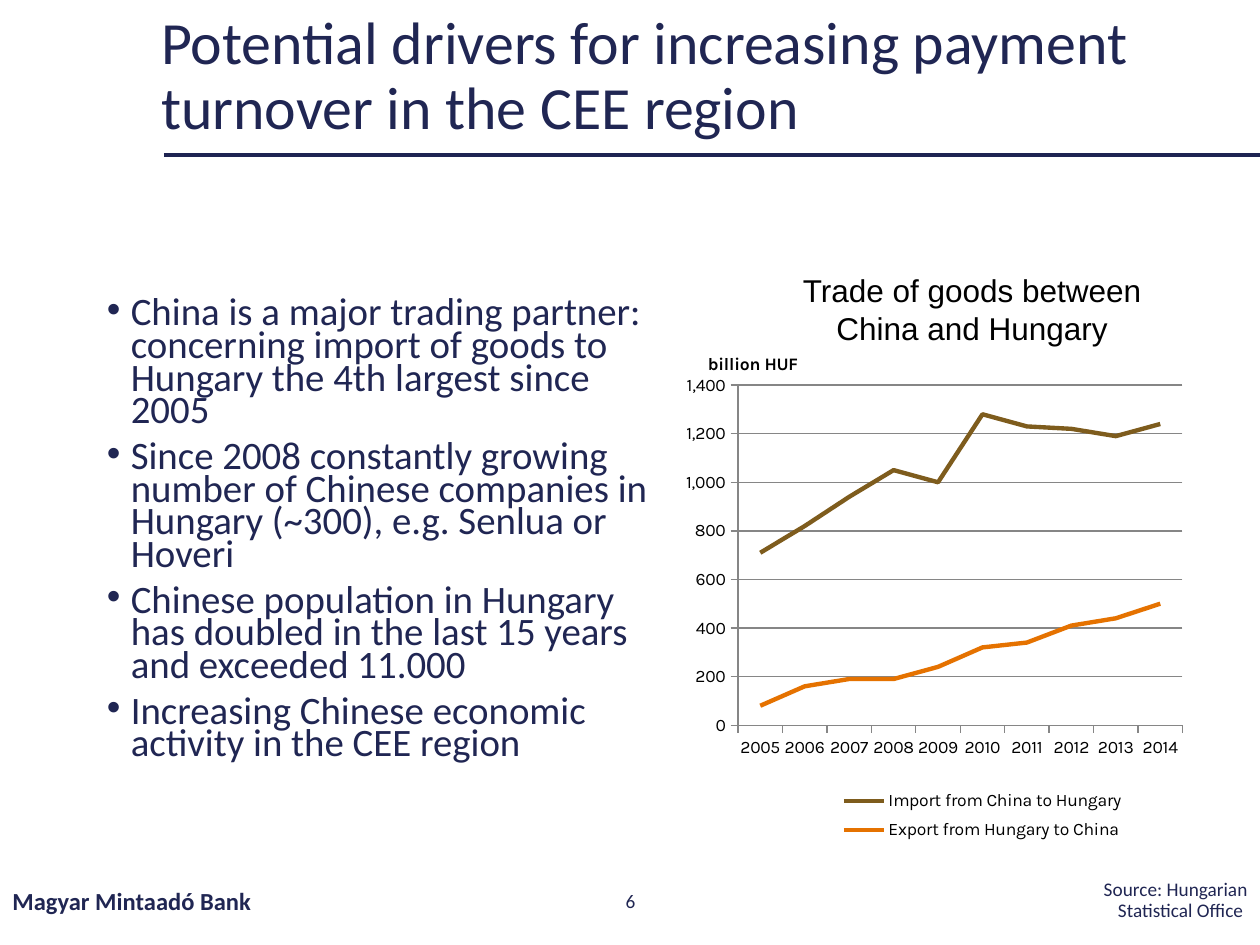
from lxml import etree
from pptx import Presentation
from pptx.chart.data import CategoryChartData
from pptx.dml.color import RGBColor
from pptx.enum.chart import XL_CHART_TYPE as ChartType
from pptx.enum.chart import XL_LEGEND_POSITION as LegendPosition
from pptx.enum.chart import XL_TICK_MARK as TickMark
from pptx.enum.shapes import MSO_CONNECTOR as Connector
from pptx.enum.text import MSO_ANCHOR as Anchor
from pptx.enum.text import PP_ALIGN as Align
from pptx.oxml import parse_xml
from pptx.oxml.ns import nsdecls, qn
from pptx.util import Inches, Pt

NAVY = RGBColor(0x20, 0x26, 0x53)
RULE_NAVY = RGBColor(0x1E, 0x24, 0x52)
BLACK = RGBColor(0, 0, 0)
GRAY = RGBColor(0x86, 0x86, 0x86)
BROWN = RGBColor(0x7E, 0x5C, 0x1D)
ORANGE = RGBColor(0xE5, 0x72, 0x00)


def format_font(font, color, **values):
    for name, value in values.items():
        setattr(font, name, value)
    font.color.rgb = color


def place_chart_part(part, index, target="", **fractions):
    """Give a chart part a manual layout, as fractions of the chart, at a child index."""
    for old in part.findall(qn("c:layout")):
        part.remove(old)
    modes = "".join(f'<c:{side}Mode val="edge"/>' for side in "xy")
    sizes = "".join(f'<c:{key} val="{value}"/>' for key, value in fractions.items())
    part.insert(index, parse_xml(
        f'<c:layout {nsdecls("c")}><c:manualLayout>{target}{modes}{sizes}'
        "</c:manualLayout></c:layout>"))


deck = Presentation()
deck.slide_width, deck.slide_height = Inches(10), Inches(7.5)
page = deck.slides.add_slide(deck.slide_layouts[5])

# Title and rule
title = page.shapes.title
title.left, title.top = Inches(1.18), Inches(0.2)
title.width, title.height = Inches(8.15), Inches(0.83)
title.text_frame.text = "Potential drivers for increasing payment turnover in the CEE region"
title.text_frame.vertical_anchor = Anchor.MIDDLE
para = title.text_frame.paragraphs[0]
para.alignment, para.line_spacing = Align.LEFT, 0.9
format_font(para.font, NAVY, name="Calibri", size=Pt(34.2))

rule = page.shapes.add_connector(
    Connector.STRAIGHT, Inches(1.3), Inches(1.23), Inches(10), Inches(1.23))
rule.line.color.rgb, rule.line.width = RULE_NAVY, Pt(2.25)
etree.SubElement(rule._element.spPr, qn("a:effectLst"))

# Bullets
bullets = [
    "China is a major trading partner: concerning import of goods to Hungary "
    "the 4th largest since 2005",
    "Since 2008 constantly growing number of Chinese companies in Hungary (~300), "
    "e.g. Senlua or Hoveri",
    "Chinese population in Hungary has doubled in the last 15 years and exceeded 11.000",
    "Increasing Chinese economic activity in the CEE region",
]
box = page.shapes.add_textbox(Inches(0.75), Inches(2.33), Inches(4.57), Inches(4.17))
box.text_frame.word_wrap = True
box.text_frame.text = "\n".join(bullets)
for number, para in enumerate(box.text_frame.paragraphs):
    para.line_spacing = 0.7
    para.space_before = Pt(7.5 if number else 0)
    properties = para._p.get_or_add_pPr()
    properties.set("marL", str(Inches(0.19)))
    properties.set("indent", str(-Inches(0.19)))
    etree.SubElement(properties, qn("a:buFont"), typeface="Arial")
    etree.SubElement(properties, qn("a:buChar"), char="•")
    format_font(para.font, NAVY, name="Calibri", size=Pt(22.2))

# Chart
data = CategoryChartData(number_format="#,##0")
data.categories = [str(year) for year in range(2005, 2015)]
data.add_series("Import from China to Hungary",
                [710, 820, 940, 1050, 1000, 1280, 1230, 1220, 1190, 1240])
data.add_series("Export from Hungary to China",
                [80, 160, 190, 190, 240, 320, 340, 410, 440, 500])
chart = page.shapes.add_chart(
    ChartType.LINE, Inches(5.24), Inches(2.73), Inches(4.41), Inches(4.09), data).chart
format_font(chart.font, BLACK, name="Karla", size=Pt(10))
chart.has_title = False
chart.plots[0].vary_by_categories = False
for series, color in zip(chart.series, (BROWN, ORANGE)):
    series.smooth = False
    series.format.line.color.rgb, series.format.line.width = color, Pt(2.5)

values = chart.value_axis
values.minimum_scale, values.maximum_scale, values.major_unit = 0, 1400, 200
values.tick_labels.number_format = "#,##0"
values.tick_labels.number_format_is_linked = False
values.has_major_gridlines = True
for axis in (chart.category_axis, values):
    axis.major_tick_mark = TickMark.OUTSIDE
for part in (chart.category_axis, values, values.major_gridlines):
    part.format.line.color.rgb, part.format.line.width = GRAY, Pt(0.75)

unit = values.axis_title
unit.text_frame.text = "billion HUF"
unit.text_frame._txBody.bodyPr.set("rot", "0")
unit.text_frame._txBody.bodyPr.set("vert", "horz")
format_font(unit.text_frame.paragraphs[0].runs[0].font, BLACK,
            name="Karla", size=Pt(10), bold=True)

chart.has_legend = True
chart.legend.position = LegendPosition.RIGHT
chart.legend.include_in_layout = False
format_font(chart.legend.font, BLACK, name="Karla", size=Pt(10))

plot_area = chart._chartSpace.chart.plotArea
place_chart_part(plot_area, 0, '<c:layoutTarget val="inner"/>',
                 x=0.14, y=0.08, w=0.8, h=0.66)
place_chart_part(unit._element, 1, x=0.08, y=0.01)
place_chart_part(chart.legend._element, 1, x=0.3, y=0.85, w=0.56, h=0.13)

# Chart heading and footer
labels = [
    ("Trade of goods between China and Hungary", (6.02, 2.1, 3.39, 0.71),
     Align.CENTER, Anchor.TOP, 1, BLACK, dict(name="Arial", size=Pt(18))),
    ("Magyar Mintaadó Bank", (0, 6.95, 3.38, 0.4),
     Align.LEFT, Anchor.MIDDLE, 1, NAVY, dict(name="Calibri", size=Pt(14), bold=True)),
    ("6", (3.88, 6.95, 2.25, 0.4),
     Align.CENTER, Anchor.MIDDLE, 1, NAVY, dict(name="Calibri", size=Pt(11))),
    ("Source: Hungarian Statistical Office ", (8.14, 6.95, 1.86, 0.4),
     Align.RIGHT, Anchor.MIDDLE, 0.9, NAVY, dict(name="Calibri", size=Pt(11))),
]
for text, place, alignment, anchor, spacing, color, font_values in labels:
    box = page.shapes.add_textbox(*map(Inches, place))
    box.text_frame.word_wrap = True
    box.text_frame.vertical_anchor = anchor
    box.text_frame.text = text
    para = box.text_frame.paragraphs[0]
    para.alignment, para.line_spacing = alignment, spacing
    format_font(para.font, color, **font_values)

deck.save("out.pptx")
